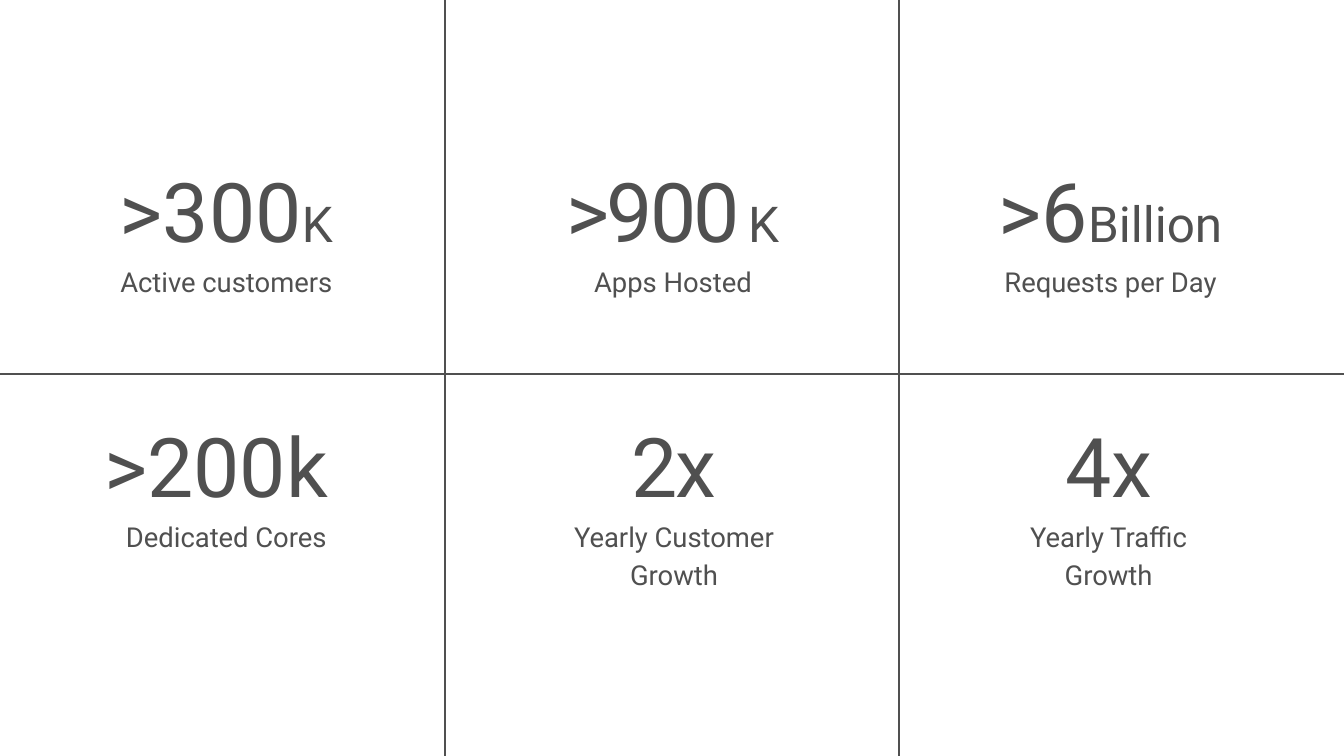
from dataclasses import dataclass

from lxml import etree
from pptx import Presentation
from pptx.dml.color import RGBColor
from pptx.enum.shapes import MSO_CONNECTOR
from pptx.enum.text import MSO_AUTO_SIZE, PP_ALIGN
from pptx.oxml.ns import qn
from pptx.util import Inches, Pt

STRAIGHT = MSO_CONNECTOR.STRAIGHT
GROW = MSO_AUTO_SIZE.SHAPE_TO_FIT_TEXT
CENTER = PP_ALIGN.CENTER

WIDE, HIGH = Inches(13.33), Inches(7.5)
INK = "505050"
FACE = "Roboto"
BIG, UNIT, GAP, SMALL = 58.8, 35.3, 23.5, 19.6
TIGHT = -210
COLS = (33.08, 66.92)
ROW = 49.47
TOPS = (20.53, 54.27)
SHORT, TALL = 21.2, 26.27


@dataclass(frozen=True)
class Part:
    text: str
    size: float
    space: int = 0


@dataclass(frozen=True)
class Stat:
    row: int
    left: float
    width: float
    height: float
    value: tuple[Part, ...]
    label: tuple[str, ...]


STATS = (
    Stat(0, 1.35, 30.98, SHORT,
         (Part(">300", BIG), Part("K", UNIT)), ("Active customers",)),
    Stat(0, 34.58, 30.98, SHORT,
         (Part(">900", BIG, TIGHT), Part(" ", GAP), Part("K", UNIT)),
         ("Apps Hosted",)),
    Stat(0, 67.14, 30.98, SHORT,
         (Part(">6", BIG), Part("Billion", UNIT)), ("Requests per Day",)),
    Stat(1, 1.35, 30.98, SHORT,
         (Part(">200k ", BIG),), ("Dedicated Cores",)),
    Stat(1, 33.31, 33.68, TALL,
         (Part("2x", BIG, TIGHT),), ("Yearly Customer", "Growth")),
    Stat(1, 70.22, 24.53, TALL,
         (Part("4x", BIG),), ("Yearly Traffic", "Growth")),
)


def color(code: str) -> RGBColor:
    return RGBColor.from_string(code)


def across(share: float) -> int:
    return round(WIDE * share / 100)


def down(share: float) -> int:
    return round(HIGH * share / 100)


def draw_rule(slide, x1: float, y1: float, x2: float, y2: float) -> None:
    rule = slide.shapes.add_connector(
        STRAIGHT, across(x1), down(y1), across(x2), down(y2))
    rule.line.color.rgb = color(INK)
    rule.line.width = Pt(1.5)
    etree.SubElement(rule._element.spPr, qn("a:effectLst"))


def write_line(para, parts: tuple[Part, ...]) -> None:
    para.alignment = CENTER
    para.line_spacing = 0.9
    para.space_after = Pt(5.9)
    for part in parts:
        run = para.add_run()
        run.text = part.text
        run.font.name = FACE
        run.font.size = Pt(part.size)
        run.font.color.rgb = color(INK)
        if part.space:
            run.font._element.set("spc", str(part.space))


def draw_stat(slide, stat: Stat) -> None:
    box = slide.shapes.add_textbox(
        across(stat.left), down(TOPS[stat.row]),
        across(stat.width), down(stat.height))
    frame = box.text_frame
    frame.word_wrap = True
    frame.auto_size = GROW
    frame.margin_left = frame.margin_right = Inches(0.2)
    frame.margin_top = frame.margin_bottom = Inches(0.16)
    write_line(frame.paragraphs[0], stat.value)
    for text in stat.label:
        write_line(frame.add_paragraph(), (Part(text, SMALL),))


def main() -> None:
    deck = Presentation()
    deck.slide_width, deck.slide_height = WIDE, HIGH
    slide = deck.slides.add_slide(deck.slide_layouts.get_by_name("Blank"))
    for col in COLS:
        draw_rule(slide, col, 0, col, 100)
    draw_rule(slide, 0, ROW, 100, ROW)
    for stat in STATS:
        draw_stat(slide, stat)
    deck.save("out.pptx")


if __name__ == "__main__":
    main()
